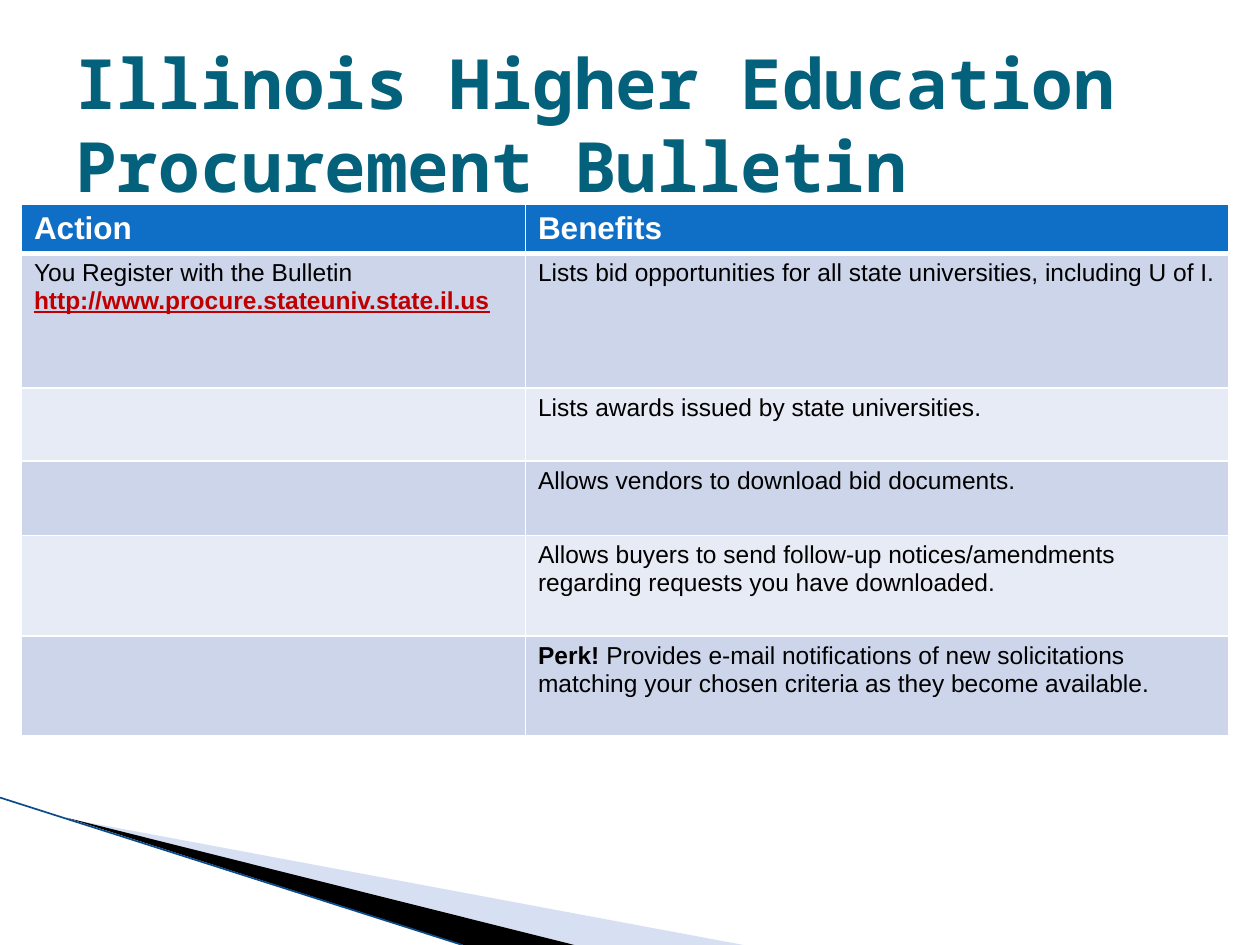
from lxml import etree
from pptx import Presentation
from pptx.dml.color import RGBColor
from pptx.enum.shapes import MSO_CONNECTOR
from pptx.enum.text import MSO_ANCHOR
from pptx.oxml.ns import qn
from pptx.util import Inches, Pt

STRAIGHT = MSO_CONNECTOR.STRAIGHT
TOP = MSO_ANCHOR.TOP
COLORS = {
    "title": "04617B", "header": "0F6FC6", "odd": "CCD5EA", "even": "E7EBF5",
    "white": "FFFFFF", "black": "000000", "link": "C00000",
    "pale": "9DB2E1", "edge": "0B4A8C",
}
HEADINGS = ["Action", "Benefits"]
ACTION = "You Register with the Bulletin"
ADDRESS = "http://www.procure.stateuniv.state.il.us"
BENEFITS = [
    [("Lists bid opportunities for all state universities, including U of I.", False)],
    [("Lists awards issued by state universities.", False)],
    [("Allows vendors to download bid documents.", False)],
    [("Allows buyers to send follow-up notices/amendments regarding requests "
      "you have downloaded.", False)],
    [("Perk!", True),
     (" Provides e-mail notifications of new solicitations matching your chosen "
      "criteria as they become available.", False)],
]
COLUMN_WIDTHS = [4, 5.58]
ROW_HEIGHTS = [0.39, 1.07, 0.58, 0.59, 0.8, 0.79]


def color(name):
    return RGBColor.from_string(COLORS[name])


def add_span(para, text, size, ink, bold=False, underline=False, face="Arial"):
    span = para.add_run()
    span.text = text
    font = span.font
    font.name, font.size, font.bold = face, Pt(size), bold
    font.underline = underline
    font.color.rgb = color(ink)


def set_borders(cell, bottom):
    props = cell._tc.get_or_add_tcPr()
    widths = {"a:lnL": 1, "a:lnR": 1, "a:lnT": 1, "a:lnB": bottom}
    for position, (tag, width) in enumerate(widths.items()):
        line = etree.Element(qn(tag), w=str(Pt(width)))
        fill = etree.SubElement(line, qn("a:solidFill"))
        etree.SubElement(fill, qn("a:srgbClr"), val=COLORS["white"])
        props.insert(position, line)


def add_wedge(page, left, top, points, fill, alpha=None):
    corners = [(Inches(left + x), Inches(top + y)) for x, y in points]
    builder = page.shapes.build_freeform(*corners[0])
    builder.add_line_segments(corners[1:])
    wedge = builder.convert_to_shape()
    wedge.shadow.inherit = False
    wedge.fill.solid()
    wedge.fill.fore_color.rgb = color(fill)
    wedge.line.fill.background()
    if alpha is not None:
        tint = wedge._element.spPr.find(".//" + qn("a:srgbClr"))
        etree.SubElement(tint, qn("a:alpha"), val=str(alpha * 1000))


def add_corner(page, left, top, width, height):
    add_wedge(page, left, top,
              [(0.55, 0.17), (width, height), (4.56, height)], "pale", 40)
    add_wedge(page, left, top,
              [(0.53, 0.16), (4.56, height), (3.68, height)], "black")
    edge = page.shapes.add_connector(
        STRAIGHT, Inches(left), Inches(top),
        Inches(left + 3.67), Inches(top + height))
    edge.line.color.rgb = color("edge")
    edge.line.width = Pt(0.95)
    etree.SubElement(edge._element.spPr, qn("a:effectLst"))


def add_benefits(page, left, top):
    frame = page.shapes.add_table(
        len(ROW_HEIGHTS), len(COLUMN_WIDTHS), Inches(left), Inches(top),
        Inches(sum(COLUMN_WIDTHS)), Inches(sum(ROW_HEIGHTS)))
    table = frame.table
    for column, width in zip(table.columns, COLUMN_WIDTHS):
        column.width = Inches(width)
    for index, height in enumerate(ROW_HEIGHTS):
        row = table.rows[index]
        row.height = Inches(height)
        fill = "header" if index == 0 else "odd" if index % 2 else "even"
        for cell in row.cells:
            cell.fill.solid()
            cell.fill.fore_color.rgb = color(fill)
            set_borders(cell, 3 if index == 0 else 1)
    for column, heading in enumerate(HEADINGS):
        add_span(table.cell(0, column).text_frame.paragraphs[0],
                 heading, 18, "white", True)
    action = table.cell(1, 0).text_frame
    add_span(action.paragraphs[0], ACTION, 14, "black")
    add_span(action.add_paragraph(), ADDRESS, 14, "link", True, True)
    for index, spans in enumerate(BENEFITS, 1):
        para = table.cell(index, 1).text_frame.paragraphs[0]
        for text, bold in spans:
            add_span(para, text, 14, "black", bold)


def add_title(page, left, top, width, height):
    box = page.shapes.add_textbox(
        Inches(left), Inches(top), Inches(width), Inches(height))
    frame = box.text_frame
    frame.word_wrap = True
    frame.vertical_anchor = TOP
    frame.margin_top, frame.margin_bottom = Inches(0.02), 0
    para = frame.paragraphs[0]
    para.line_spacing = Pt(47.4)
    add_span(para, "Illinois Higher Education Procurement Bulletin",
             39.6, "title", True, face="Noto Sans Mono")


def main():
    deck = Presentation()
    deck.slide_width, deck.slide_height = Inches(10), Inches(7.5)
    page = deck.slides.add_slide(deck.slide_layouts[6])
    add_corner(page, 0, 6.33, 5.9, 1.17)
    add_benefits(page, 0.17, 1.62)
    add_title(page, 0.5, 0.3, 9, 1.25)
    deck.save("out.pptx")


if __name__ == "__main__":
    main()
